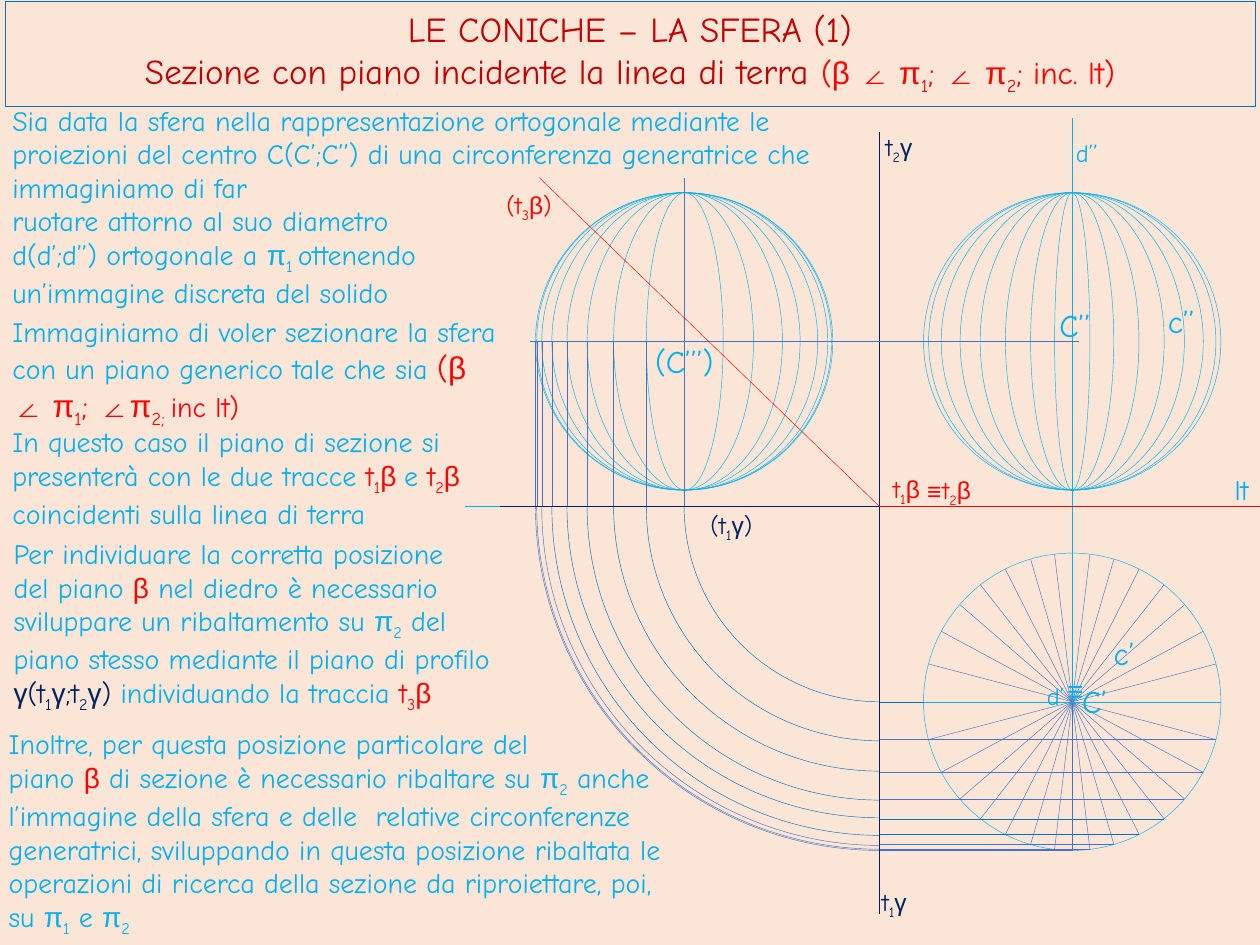
from itertools import groupby
from math import sqrt

from lxml import etree
from pptx import Presentation
from pptx.dml.color import RGBColor
from pptx.enum.shapes import MSO_CONNECTOR, MSO_SHAPE
from pptx.enum.text import MSO_ANCHOR, MSO_AUTO_SIZE, PP_ALIGN
from pptx.oxml.ns import qn
from pptx.util import Inches, Pt

OVAL, ARC = MSO_SHAPE.OVAL, MSO_SHAPE.ARC
STRAIGHT = MSO_CONNECTOR.STRAIGHT
TOP, MIDDLE = MSO_ANCHOR.TOP, MSO_ANCHOR.MIDDLE
CENTER, LEFT = PP_ALIGN.CENTER, PP_ALIGN.LEFT
FIT = MSO_AUTO_SIZE.SHAPE_TO_FIT_TEXT

PEACH = RGBColor(0xFB, 0xE5, 0xD6)
CYAN = RGBColor(0x00, 0xB0, 0xF0)
BLUE = RGBColor(0x00, 0x70, 0xC0)
STEEL = RGBColor(0x44, 0x72, 0xC4)
NAVY = RGBColor(0x00, 0x20, 0x60)
RED = RGBColor(0xFF, 0x00, 0x00)
DARK = RGBColor(0xC0, 0x00, 0x00)
FONT, GREEK = "Comic Neue", "Arial"

# Content: a segment is a text or (text, colour[, size]); "_" lowers the next letter
TITLE = [
    [("LE CONICHE – LA SFERA (1)", DARK)],
    [("Sezione con piano incidente la linea di terra ", DARK),
     ("(β ∠ π_1; ∠ π_2; inc. lt)", RED, 18)],
]

NOTES = [  # left, top, width, height, paragraphs
    (0, 2.45, 4.1, 0.94, [
        ["Immaginiamo di voler sezionare la sfera con un piano generico tale che sia ",
         ("(β ∠ π_1; ∠π_2_;_ ", RED, 18), ("inc lt)", RED)]]),
    (0, 0.77, 6.67, 1.72, [
        ["Sia data la sfera nella rappresentazione ortogonale mediante le proiezioni del "
         "centro C(C’;C’’) di una circonferenza generatrice che immaginiamo di far"],
        ["ruotare attorno al suo diametro"],
        ["d(d’;d’’) ortogonale a π_1_ ottenendo"],
        ["un’immagine discreta del solido"]]),
    (0, 3.32, 3.83, 0.91, [
        ["In questo caso il piano di sezione si presenterà con le due tracce ",
         ("t_1β ", RED), "e ", ("t_2β", RED), " coincidenti sulla linea di terra"]]),
    (0.01, 4.21, 4.47, 1.45, [
        ["Per individuare la corretta posizione"],
        ["del piano ", ("β", RED),
         " nel diedro è necessario sviluppare un ribaltamento su π_2 del"],
        ["piano stesso mediante il piano di profilo ", ("γ(t_1γ;t_2γ) ", NAVY),
         "individuando la traccia ", ("t_3β", RED)]]),
    (-0.03, 5.72, 5.38, 1.72, [
        ["Inoltre, per questa posizione particolare del"],
        ["piano ", ("β", RED),
         " di sezione è necessario ribaltare su π_2 anche l’immagine della sfera e delle  "
         "relative circonferenze generatrici, sviluppando in questa posizione ribaltata le "
         "operazioni di ricerca della sezione da riproiettare, poi, su π_1 e π_2"]]),
]

LABELS = [  # left, top, width, height, text, colour, size, anchor
    (8.31, 2.38, 0.47, 0.4, "C’’", CYAN, 18, MIDDLE),
    (8.49, 5.36, 0.47, 0.4, "C’", CYAN, 18, MIDDLE),
    (5.1, 2.65, 0.71, 0.43, "(C’’’)", CYAN, 18, MIDDLE),
    (8.74, 4.98, 0.51, 0.41, "c’", CYAN, 18, TOP),
    (9.17, 2.35, 0.51, 0.41, "c’’", CYAN, 18, TOP),
    (8.44, 1.05, 0.48, 0.34, "d’’", CYAN, 14, TOP),
    (8.21, 5.36, 0.48, 0.34, "d’", CYAN, 14, TOP),
    (9.7, 3.7, 0.38, 0.37, "lt", CYAN, 16, TOP),
    (8.37, 5.3, 0.41, 0.37, "≡", CYAN, 16, TOP),
    (7.38, 3.72, 0.51, 0.34, "t_2β", RED, 14, TOP),
    (6.99, 3.71, 0.47, 0.34, "t_1β", RED, 14, TOP),
    (7.26, 3.73, 0.31, 0.34, "≡", RED, 14, TOP),
    (3.92, 1.46, 0.63, 0.34, "(t_3β)", RED, 14, TOP),
    (6.9, 6.99, 0.56, 0.34, "t_1γ", NAVY, 14, TOP),
    (6.93, 1, 0.59, 0.34, "t_2γ", NAVY, 14, TOP),
    (5.54, 4, 0.59, 0.35, "(t_1γ)", NAVY, 14, TOP),
]

# Geometry: sphere radius, origin of the axes, centres of the three views
RAD = 1.18
OX, OY = 6.98, 4.02
FRONT, SIDE = 8.51, 5.43
HIGH, PLAN = 2.71, 5.57
HALVES = [0.14, 0.33, 0.53, 0.73, 0.89, 1.04, 1.14]  # half widths of the meridians

AXES = [  # x1, y1, x2, y2, colour
    (3.69, OY, 9.95, OY, CYAN),
    (FRONT, 0.94, FRONT, PLAN, CYAN),
    (FRONT, PLAN, FRONT, PLAN + RAD, STEEL),
    (FRONT - RAD, PLAN, FRONT + RAD, PLAN, CYAN),
    (OX, 1.05, OX, 7.25, NAVY),
    (4.21, HIGH, 8.56, HIGH, STEEL),
    (SIDE, OY, SIDE, 1.41, STEEL),
    (OX, OY, 4.28, 1.41, RED),
    (OX, OY, 10, OY, RED),
    (3.97, OY, OX, OY, NAVY),
]

prs = Presentation()
prs.slide_width, prs.slide_height = Inches(10), Inches(7.5)
slide = prs.slides.add_slide(prs.slide_layouts[5])
slide.background.fill.solid()
slide.background.fill.fore_color.rgb = PEACH
shapes = slide.shapes


def box(*sides):
    return [Inches(round(side, 2)) for side in sides]


def split(text):
    """Yield (letters, font, lowered); a space keeps the font before it."""
    marks, font, low = [], FONT, False
    for char in text:
        if char == "_":
            low = True
            continue
        if char != " ":
            font = GREEK if char in "βγπ∠≡" else FONT
        marks.append((char, font, low))
        low = False
    for (font, low), group in groupby(marks, key=lambda mark: mark[1:]):
        yield "".join(mark[0] for mark in group), font, low


def write(frame, paras, size, align=LEFT, anchor=TOP):
    frame.word_wrap = True
    frame.auto_size = FIT
    frame.vertical_anchor = anchor
    for i, parts in enumerate(paras):
        para = frame.paragraphs[0] if i == 0 else frame.add_paragraph()
        para.alignment = align
        for part in parts:
            part = (part, CYAN) if isinstance(part, str) else part
            text, tint, points = (*part, size)[:3]
            for letters, font, low in split(text):
                run = para.add_run()
                run.text = letters
                run.font.name = font
                run.font.size = Pt(points)
                run.font.color.rgb = tint
                if low:
                    run.font._element.set("baseline", "-25000")


def line(x1, y1, x2, y2, tint):
    link = shapes.add_connector(STRAIGHT, *box(x1, y1, x2, y2))
    link.line.color.rgb = tint
    link.line.width = Pt(0.25)
    etree.SubElement(link._element.spPr, qn("a:effectLst"))


def curve(kind, x, y, rx, ry, tint):
    form = shapes.add_shape(kind, *box(x - rx, y - ry, 2 * rx, 2 * ry))
    form.shadow.inherit = False
    form.fill.background()
    form.line.color.rgb = tint
    form.line.width = Pt(0.25)
    return form


# Title
title = shapes.title
title.left, title.top, title.width, title.height = box(0.04, 0.01, 9.92, 0.77)
title.fill.solid()
title.fill.fore_color.rgb = PEACH
title.line.color.rgb = BLUE
title.line.width = Pt(0.25)
write(title.text_frame, TITLE, 20, CENTER)

# Outlines of the three views
for x, y in ((FRONT, HIGH), (SIDE, HIGH), (FRONT, PLAN)):
    curve(OVAL, x, y, RAD, RAD, CYAN)

# Meridians in both elevations, diameters in plan
for half in HALVES:
    depth = sqrt(RAD ** 2 - half ** 2)
    curve(OVAL, FRONT, HIGH, half, RAD, CYAN)
    curve(OVAL, SIDE, HIGH, depth, RAD, CYAN)
    for dx in (half, -half):
        line(FRONT - dx, PLAN + depth, FRONT + dx, PLAN - depth, STEEL)

# Plan points turned about the origin into the side view
for half in [0, *HALVES, RAD]:
    depth = sqrt(RAD ** 2 - half ** 2)
    reach = PLAN - OY + depth
    end = FRONT + (half if depth else 0)
    arc = curve(ARC, OX, OY, reach, reach, STEEL if half < 0.5 else BLUE)
    arc.adjustments[0], arc.adjustments[1] = 54, 108  # 90° to 180°
    line(OX, OY + reach, end, OY + reach, BLUE if half in (0.53, 0.73, RAD) else STEEL)
    if depth:
        line(OX - reach, OY, OX - reach, HIGH, STEEL)

# Axes and traces
for axis in AXES:
    line(*axis)

# Notes and labels
for *place, paras in NOTES:
    write(shapes.add_textbox(*box(*place)).text_frame, paras, 16)
for *place, text, tint, size, anchor in LABELS:
    frame = shapes.add_textbox(*box(*place)).text_frame
    write(frame, [[(text, tint)]], size, anchor=anchor)

prs.save("out.pptx")
